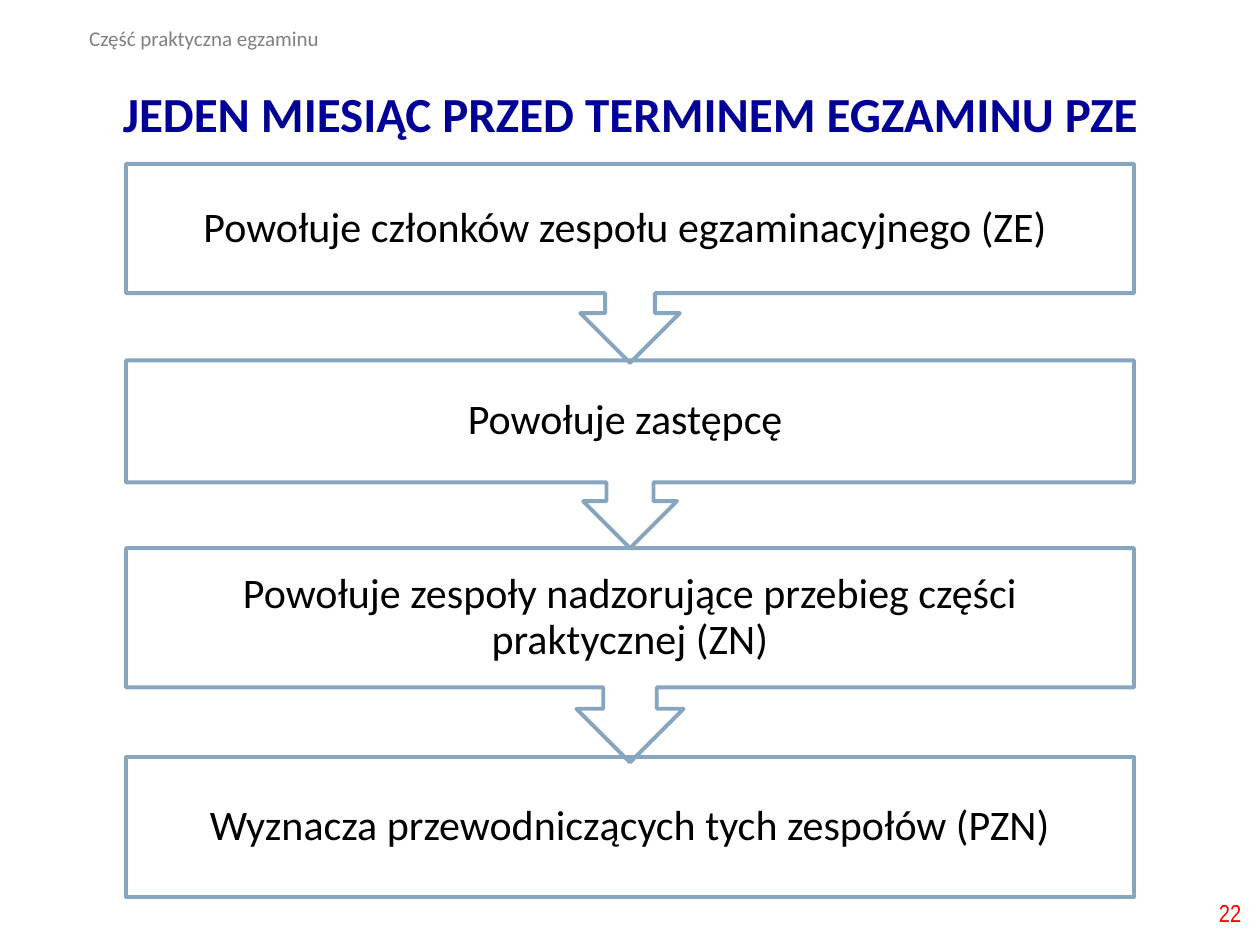
"""Build the slide on the steps due one month before the exam."""
from pptx import Presentation
from pptx.dml.color import RGBColor as Rgb
from pptx.enum.shapes import MSO_SHAPE as Shape
from pptx.enum.text import MSO_ANCHOR as Anchor, PP_ALIGN as Align
from pptx.util import Inches, Pt

HEAD = "Część praktyczna egzaminu"
TITLE = "JEDEN MIESIĄC PRZED TERMINEM EGZAMINU PZE"
PAGE = "22"
STEPS = [
    ("Powołuje członków zespołu egzaminacyjnego (ZE) ", 1.3, 1.58),
    ("Powołuje zastępcę ", 2.86, 1.49),
    ("Powołuje zespoły nadzorujące przebieg części praktycznej (ZN)", 4.35, 1.7),
    ("Wyznacza przewodniczących tych zespołów (PZN)", 6.01, 1.11),
]
COLORS = {"title": "000099", "page": "FF0000", "head": "808080",
          "line": "86A5BE", "text": "000000"}
LEFT, WIDTH, BODY = 1, 8, 0.65


def add_text(slide, text, area, size, color, font="Calibri", bold=False,
             align=Align.LEFT, anchor=Anchor.MIDDLE, space=1.0, inset=None):
    frame = slide.shapes.add_textbox(*map(Inches, area)).text_frame
    frame.word_wrap = True
    frame.vertical_anchor = anchor
    if inset is not None:
        frame.margin_left = frame.margin_right = Inches(inset)
        frame.margin_top = frame.margin_bottom = Inches(inset)
    para = frame.paragraphs[0]
    para.alignment = align
    para.line_spacing = space
    run = para.add_run()
    run.text = text
    run.font.name = font
    run.font.size = Pt(size)
    run.font.bold = bold
    run.font.color.rgb = Rgb.from_string(COLORS[color])


def add_step(slide, text, top, height, last):
    kind = Shape.RECTANGLE if last else Shape.UP_ARROW_CALLOUT
    box = slide.shapes.add_shape(kind, *map(Inches, (LEFT, top, WIDTH, height)))
    box.rotation = 0 if last else 180
    box.shadow.inherit = False
    box.fill.background()
    box.line.color.rgb = Rgb.from_string(COLORS["line"])
    box.line.width = Pt(2.25)
    body = height if last else height * BODY
    add_text(slide, text, (LEFT, top, WIDTH, body), 24, "text",
             align=Align.CENTER, space=0.9, inset=0.19)


def main():
    deck = Presentation()
    deck.slide_width, deck.slide_height = Inches(10), Inches(7.5)
    slide = deck.slides.add_slide(deck.slide_layouts[6])
    add_text(slide, TITLE, (0.69, 0.71, 8.62, 0.43), 28, "title", bold=True,
             align=Align.CENTER, space=0.9)
    add_text(slide, PAGE, (7.7, 7.04, 2.25, 0.4), 14, "page",
             font="Arial Narrow", align=Align.RIGHT)
    add_text(slide, HEAD, (0.61, 0.15, 2.67, 0.3), 12, "head", anchor=Anchor.TOP)
    for step in reversed(STEPS):
        add_step(slide, *step, last=step is STEPS[-1])
    deck.save("out.pptx")


if __name__ == "__main__":
    main()
